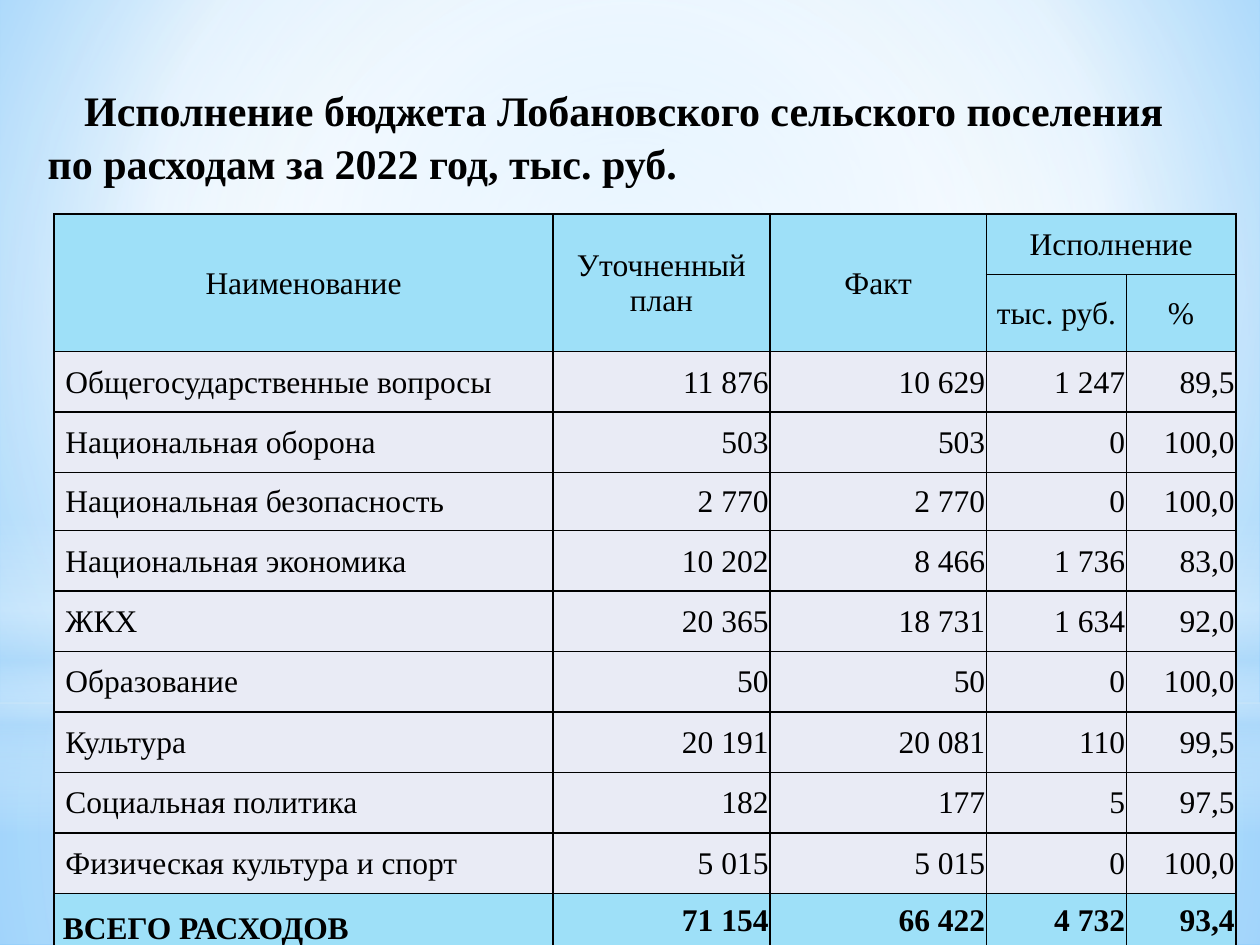
"""Budget execution slide: a title above a table of expenses."""
from dataclasses import dataclass
from lxml import etree
from pptx import Presentation
from pptx import util as u
from pptx.dml import color
from pptx.enum import shapes, text
from pptx.oxml import ns

HEADER, BODY = "9EE0F8", "E9EBF5"
CENTRE = (50, 50, 50, 50)

WIDTHS = [39.6, 17.2, 17.2, 11.1, 8.7]
HEIGHTS = [4.8, 4, 4.8, 4.8, 4.6] + [4.8] * 6 + [4.2]
HEADINGS = [
    ["Наименование", "Уточненный план", "Факт", "Исполнение", ""],
    ["", "", "", "тыс. руб.", "%"],
]
EXPENSES = [
    ["Общегосударственные вопросы", "11 876", "10 629", "1 247", "89,5"],
    ["Национальная оборона", "503", "503", "0", "100,0"],
    ["Национальная безопасность", "2 770", "2 770", "0", "100,0"],
    ["Национальная экономика", "10 202", "8 466", "1 736", "83,0"],
    ["ЖКХ", "20 365", "18 731", "1 634", "92,0"],
    ["Образование", "50", "50", "0", "100,0"],
    ["Культура", "20 191", "20 081", "110", "99,5"],
    ["Социальная политика", "182", "177", "5", "97,5"],
    ["Физическая культура и спорт", "5 015", "5 015", "0", "100,0"],
]
TOTAL = ["ВСЕГО РАСХОДОВ", "71 154", "66 422", "4 732", "93,4"]
MERGES = [((0, 0), (1, 0)), ((0, 1), (1, 1)), ((0, 2), (1, 2)), ((0, 3), (0, 4))]


def rgb(code):
    """Turn a hex string into a colour."""
    return color.RGBColor.from_string(code)


def add(parent, tag, **attributes):
    """Append a drawing element with the given attributes."""
    element = etree.SubElement(parent, ns.qn(tag))
    for key, value in attributes.items():
        element.set(key, str(value))
    return element


def add_colour(parent, code, opacity=100):
    """Append a hex colour with its opacity in percent."""
    tint = add(parent, "a:srgbClr", val=code)
    if opacity < 100:
        add(tint, "a:alpha", val=opacity * 1000)


def gradient(old_fill, stops, focus=None):
    """Replace a fill by a radial gradient, or a vertical one without focus."""
    fill = etree.Element(ns.qn("a:gradFill"))
    fill.set("rotWithShape", "1")
    stop_list = add(fill, "a:gsLst")
    for place, *tint in stops:
        add_colour(add(stop_list, "a:gs", pos=place * 1000), *tint)
    if focus:
        circle = add(fill, "a:path", path="circle")
        edges = {side: edge * 1000 for side, edge in zip("ltrb", focus)}
        add(circle, "a:fillToRect", **edges)
    else:
        add(fill, "a:lin", ang=90 * 60000, scaled=0)
    old_fill.getparent().replace(old_fill, fill)


@dataclass
class Board:
    """Holds the style and the slide, on a grid of 100 columns by 75 rows."""
    deck: object
    slide: object
    font: str = "Times New Roman"
    ink: str = "000000"

    def across(self, columns):
        """Length of a number of grid columns."""
        return u.Emu(round(self.deck.slide_width * columns / 100))

    def down(self, rows):
        """Length of a number of grid rows."""
        return u.Emu(round(self.deck.slide_height * rows / 75))

    def place(self, left, top, width, height):
        """Position and size of a grid area."""
        return self.across(left), self.down(top), self.across(width), self.down(height)

    def background(self, stops, focus):
        """Fill the slide background with a gradient."""
        backdrop = self.slide.background
        backdrop.fill.solid()
        backdrop.fill.fore_color.rgb = rgb("FFFFFF")
        gradient(self.slide.element.find(".//" + ns.qn("a:solidFill")), stops, focus)

    def glow(self, kind, area, stops, focus=None):
        """Add a borderless shape with a gradient."""
        light = self.slide.shapes.add_shape(kind, *self.place(*area))
        light.shadow.inherit = False
        light.line.fill.background()
        light.fill.solid()
        light.fill.fore_color.rgb = rgb("FFFFFF")
        gradient(light.element.spPr.find(ns.qn("a:solidFill")), stops, focus)

    def words(self, paragraph, wording, size, bold=False):
        """Add one run in the slide's font."""
        run = paragraph.add_run()
        run.text = wording
        run.font.name, run.font.size, run.font.bold = self.font, u.Pt(size), bold
        run.font.color.rgb = rgb(self.ink)

    def title(self, area, lines, indent):
        """Add a bold heading whose first line is indented."""
        frame = self.slide.shapes.add_textbox(*self.place(*area)).text_frame
        frame.word_wrap = True
        heading = frame.paragraphs[0]
        heading.line_spacing = 1.05
        heading._p.get_or_add_pPr().set("indent", str(self.across(indent)))
        for number, line in enumerate(lines):
            if number:
                heading.add_line_break()
            self.words(heading, line, 24, bold=True)

    def cell(self, cell, wording, fill, align, bold=False, indent=0, anchor="MIDDLE"):
        """Fill, border and label one table cell."""
        cell.fill.solid()
        cell.fill.fore_color.rgb = rgb(fill)
        cell.margin_left = cell.margin_right = cell.margin_top = u.Inches(0.01)
        cell.margin_bottom = 0
        cell.vertical_anchor = text.MSO_ANCHOR[anchor]
        properties = cell._tc.get_or_add_tcPr()
        for index, side in enumerate("LRTB"):
            border = add(properties, f"a:ln{side}", w=u.Pt(1))
            add_colour(add(border, "a:solidFill"), self.ink)
            properties.insert(index, border)
        label = cell.text_frame.paragraphs[0]
        label.alignment = text.PP_ALIGN[align]
        if indent:
            label._p.get_or_add_pPr().set("marL", str(self.across(indent)))
        if wording:
            self.words(label, wording, 18, bold)

    def table(self, left, top):
        """Add the table of expenses."""
        size = len(HEIGHTS), len(WIDTHS)
        area = self.place(left, top, sum(WIDTHS), sum(HEIGHTS))
        budget = self.slide.shapes.add_table(*size, *area).table
        budget.first_row = budget.horz_banding = False
        for column, width in zip(budget.columns, WIDTHS):
            column.width = self.across(width)
        for row, height in zip(budget.rows, HEIGHTS):
            row.height = self.down(height)
        for start, end in MERGES:
            budget.cell(*start).merge(budget.cell(*end))
        heading = dict(fill=HEADER, align="CENTER")
        amount = dict(fill=BODY, align="RIGHT")
        name = dict(fill=BODY, align="LEFT", indent=0.8)
        total = dict(fill=HEADER, align="RIGHT", bold=True)
        total_name = dict(total, align="LEFT", indent=0.6, anchor="BOTTOM")
        styles = [(heading, heading)] * len(HEADINGS)
        styles += [(name, amount)] * len(EXPENSES) + [(total_name, total)]
        for r, (entries, (first, rest)) in enumerate(zip(HEADINGS + EXPENSES + [TOTAL], styles)):
            for c, entry in enumerate(entries):
                self.cell(budget.cell(r, c), entry, **(rest if c else first))


def main():
    """Build and save the slide."""
    deck = Presentation()
    deck.slide_width, deck.slide_height = u.Inches(10), u.Inches(7.5)
    board = Board(deck, deck.slides.add_slide(deck.slide_layouts[6]))
    box, oval = shapes.MSO_SHAPE.RECTANGLE, shapes.MSO_SHAPE.OVAL
    white, sky = "FFFFFF", "B4DCFA"
    board.background([(0, "9ED5FF"), (60, white), (100, "5BB9FF")], (20, 10, 20, 60))
    board.glow(box, (0, 55.8, 100, 19.2),
               [(0, white, 91), (37, white, 76), (100, sky, 79)], CENTRE)
    board.glow(box, (0, 0, 100, 55.8),
               [(0, white, 89), (48, white, 62), (100, sky, 79)], CENTRE)
    board.glow(box, (0, 41.2, 100, 25),
               [(0, white, 0), (29, white, 30), (45, sky, 40),
                (55, white, 26), (65, sky, 60), (100, white, 0)])
    board.glow(oval, (0, 17.5, 100, 55.8), [(0, white), (56, white, 0)], CENTRE)
    board.title((2.8, 6, 94.5, 7.1),
                ["Исполнение бюджета Лобановского сельского поселения",
                 "по расходам за 2022 год, тыс. руб."], indent=2.9)
    board.table(4.3, 17)
    deck.save("out.pptx")


if __name__ == "__main__":
    main()
